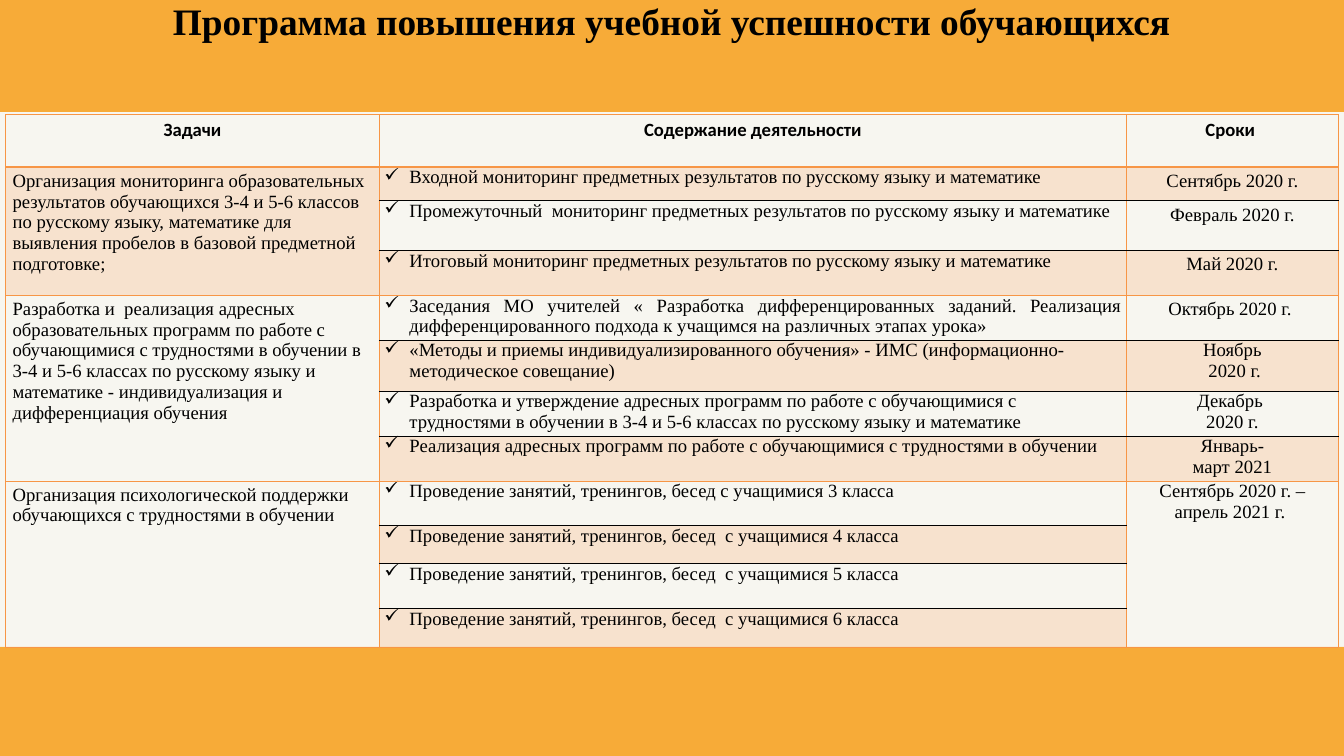
from typing import NamedTuple

from lxml.etree import SubElement
from pptx import Presentation
from pptx.dml.color import RGBColor
from pptx.enum.shapes import MSO_SHAPE as Shape
from pptx.enum.text import MSO_ANCHOR as Anchor, PP_ALIGN as Align
from pptx.oxml.ns import qn
from pptx.slide import Slide
from pptx.table import Table, _Cell as Cell
from pptx.util import Pt

EMU_PER_PX = 9525
WIDTH, HEIGHT = 1920, 1080

AMBER = RGBColor(0xF7, 0xAB, 0x38)
CREAM = RGBColor(0xF7, 0xF6, 0xF0)
ORANGE = RGBColor(0xF7, 0x96, 0x46)
BLACK = RGBColor(0, 0, 0)

SERIF, SANS = "Times New Roman", "Calibri"
TITLE = "Программа повышения учебной успешности обучающихся"
HEADERS = ["Задачи", "Содержание деятельности", "Сроки "]
COLUMN_WIDTHS = [534, 1067, 303]
ROW_HEIGHTS = [75, 48, 71, 64, 64, 73, 59, 60, 64, 54, 64, 56]
SIDE_PADDING, TOP_PADDING, NARROW_PADDING = 10, 5, 7
BULLET_INDENT = 36
LAST_JUSTIFIED_ROW = 4


class Band(NamedTuple):
    top: int
    bottom: int
    color: RGBColor


class Activity(NamedTuple):
    text: str
    dates: str = ""


class Task(NamedTuple):
    goal: str
    activities: list[Activity]
    shared_dates: bool = False


BANDS = [Band(160, 924, CREAM), Band(924, HEIGHT, AMBER), Band(0, 160, AMBER)]

TASKS = [
    Task(
        "Организация мониторинга образовательных результатов обучающихся 3-4 и 5-6 классов "
        "по русскому языку, математике для выявления пробелов в базовой предметной подготовке;",
        [
            Activity("Входной мониторинг предметных результатов по русскому языку и математике ",
                     "Сентябрь 2020 г."),
            Activity("Промежуточный  мониторинг предметных результатов по русскому языку и математике ",
                     "Февраль 2020 г."),
            Activity("Итоговый мониторинг предметных результатов по русскому языку и математике ",
                     "Май 2020 г."),
        ],
    ),
    Task(
        "Разработка и  реализация адресных образовательных программ по работе с обучающимися "
        "с трудностями в обучении в 3-4 и 5-6 классах по русскому языку и математике - "
        "индивидуализация и дифференциация обучения",
        [
            Activity("Заседания МО учителей « Разработка дифференцированных заданий. Реализация "
                     "дифференцированного подхода к учащимся на различных этапах урока»",
                     "Октябрь 2020 г. "),
            Activity("«Методы и приемы индивидуализированного обучения» - ИМС "
                     "(информационно-методическое совещание)", "Ноябрь\n 2020 г."),
            Activity("Разработка и утверждение адресных программ по работе с обучающимися с "
                     "трудностями в обучении в 3-4 и 5-6 классах по русскому языку и математике",
                     "Декабрь \n2020 г."),
            Activity("Реализация адресных программ по работе с обучающимися с трудностями в обучении",
                     "Январь-\nмарт 2021"),
        ],
    ),
    Task(
        "Организация психологической поддержки обучающихся с трудностями в обучении",
        [
            Activity("Проведение занятий, тренингов, бесед с учащимися 3 класса",
                     "Сентябрь 2020 г. – апрель 2021 г. "),
            Activity("Проведение занятий, тренингов, бесед  с учащимися 4 класса"),
            Activity("Проведение занятий, тренингов, бесед  с учащимися 5 класса"),
            Activity("Проведение занятий, тренингов, бесед  с учащимися 6 класса"),
        ],
        shared_dates=True,
    ),
]


def px(value: int) -> int:
    return value * EMU_PER_PX


def add_band(slide: Slide, band: Band) -> None:
    shape = slide.shapes.add_shape(
        Shape.RECTANGLE, 0, px(band.top), px(WIDTH), px(band.bottom - band.top))
    shape.shadow.inherit = False
    shape.fill.solid()
    shape.fill.fore_color.rgb = band.color
    shape.line.fill.background()


def add_title(slide: Slide) -> None:
    frame = slide.shapes.add_textbox(px(63), px(-3), px(1793), px(64)).text_frame
    frame.word_wrap = True
    frame.vertical_anchor = Anchor.BOTTOM
    frame.margin_left = frame.margin_right = frame.margin_top = frame.margin_bottom = 0
    paragraph = frame.paragraphs[0]
    paragraph.text = TITLE
    paragraph.alignment = Align.CENTER
    font = paragraph.font
    font.name, font.size, font.bold = SERIF, Pt(40), True
    font.color.rgb = BLACK


def write_cell(cell: Cell, text: str, align: Align, font_name: str = SERIF,
               bold: bool = False, narrow: bool = False) -> None:
    cell.margin_left = cell.margin_right = px(NARROW_PADDING if narrow else SIDE_PADDING)
    cell.margin_top = cell.margin_bottom = px(0 if narrow else TOP_PADDING)
    cell.text = text
    for paragraph in cell.text_frame.paragraphs:
        paragraph.alignment = align
        font = paragraph.font
        font.name, font.size, font.bold = font_name, Pt(20), bold
        font.color.rgb = BLACK


def add_check_mark(cell: Cell) -> None:
    properties = cell.text_frame.paragraphs[0]._p.get_or_add_pPr()
    properties.set("marL", str(px(BULLET_INDENT)))
    properties.set("indent", str(-px(BULLET_INDENT)))
    bullet = SubElement(properties, qn("a:buChar"))
    bullet.set("char", "✓")
    properties.insert_element_before(bullet, "a:tabLst", "a:defRPr", "a:extLst")


def add_border(cell: Cell, side: str, color: RGBColor, points: int = 1) -> None:
    line = SubElement(cell._tc.get_or_add_tcPr(), qn(f"a:ln{side}"), w=str(Pt(points)))
    fill = SubElement(line, qn("a:solidFill"))
    SubElement(fill, qn("a:srgbClr"), val=str(color))


def style_cell(cell: Cell, top: RGBColor, bottom: RGBColor, tinted: bool,
               bottom_points: int = 1, top_points: int = 1) -> None:
    for side in "LR":
        add_border(cell, side, ORANGE)
    add_border(cell, "T", top, top_points)
    add_border(cell, "B", bottom, bottom_points)
    if not tinted:
        cell.fill.background()
        return
    cell.fill.solid()
    cell.fill.fore_color.rgb = ORANGE
    color = cell._tc.tcPr.find(f"{qn('a:solidFill')}/{qn('a:srgbClr')}")
    SubElement(color, qn("a:alpha"), val="20000")


def fill_task(table: Table, task: Task, first: int) -> None:
    last = first + len(task.activities) - 1
    merged_columns = [0, 2] if task.shared_dates else [0]
    for row, activity in enumerate(task.activities, first):
        early = row <= LAST_JUSTIFIED_ROW
        write_cell(table.cell(row, 1), activity.text,
                   Align.JUSTIFY if early else Align.LEFT, narrow=True)
        add_check_mark(table.cell(row, 1))
        if activity.dates:
            write_cell(table.cell(row, 2), activity.dates, Align.CENTER, narrow=not early)
        for column in range(3):
            merged = column in merged_columns
            top = ORANGE if merged or row == first else BLACK
            bottom = ORANGE if merged or row == last else BLACK
            tinted = (first if merged else row) % 2 == 1
            style_cell(table.cell(row, column), top, bottom, tinted,
                       top_points=2 if row == 1 else 1)
    write_cell(table.cell(first, 0), task.goal, Align.LEFT)
    for column in merged_columns:
        table.cell(first, column).merge(table.cell(last, column))


def add_program_table(slide: Slide) -> None:
    table = slide.shapes.add_table(
        len(ROW_HEIGHTS), len(COLUMN_WIDTHS), px(8), px(164),
        px(sum(COLUMN_WIDTHS)), px(sum(ROW_HEIGHTS))).table
    table.first_row = table.horz_banding = False
    for column, width in zip(table.columns, COLUMN_WIDTHS):
        column.width = px(width)
    for row, height in zip(table.rows, ROW_HEIGHTS):
        row.height = px(height)
    for cell, header in zip(table.rows[0].cells, HEADERS):
        write_cell(cell, header, Align.CENTER, SANS, bold=True)
        style_cell(cell, ORANGE, ORANGE, tinted=False, bottom_points=2)
    first = 1
    for task in TASKS:
        fill_task(table, task, first)
        first += len(task.activities)


def main() -> None:
    presentation = Presentation()
    presentation.slide_width, presentation.slide_height = px(WIDTH), px(HEIGHT)
    slide = presentation.slides.add_slide(presentation.slide_layouts[6])
    for band in BANDS:
        add_band(slide, band)
    add_title(slide)
    add_program_table(slide)
    presentation.save("out.pptx")


if __name__ == "__main__":
    main()
